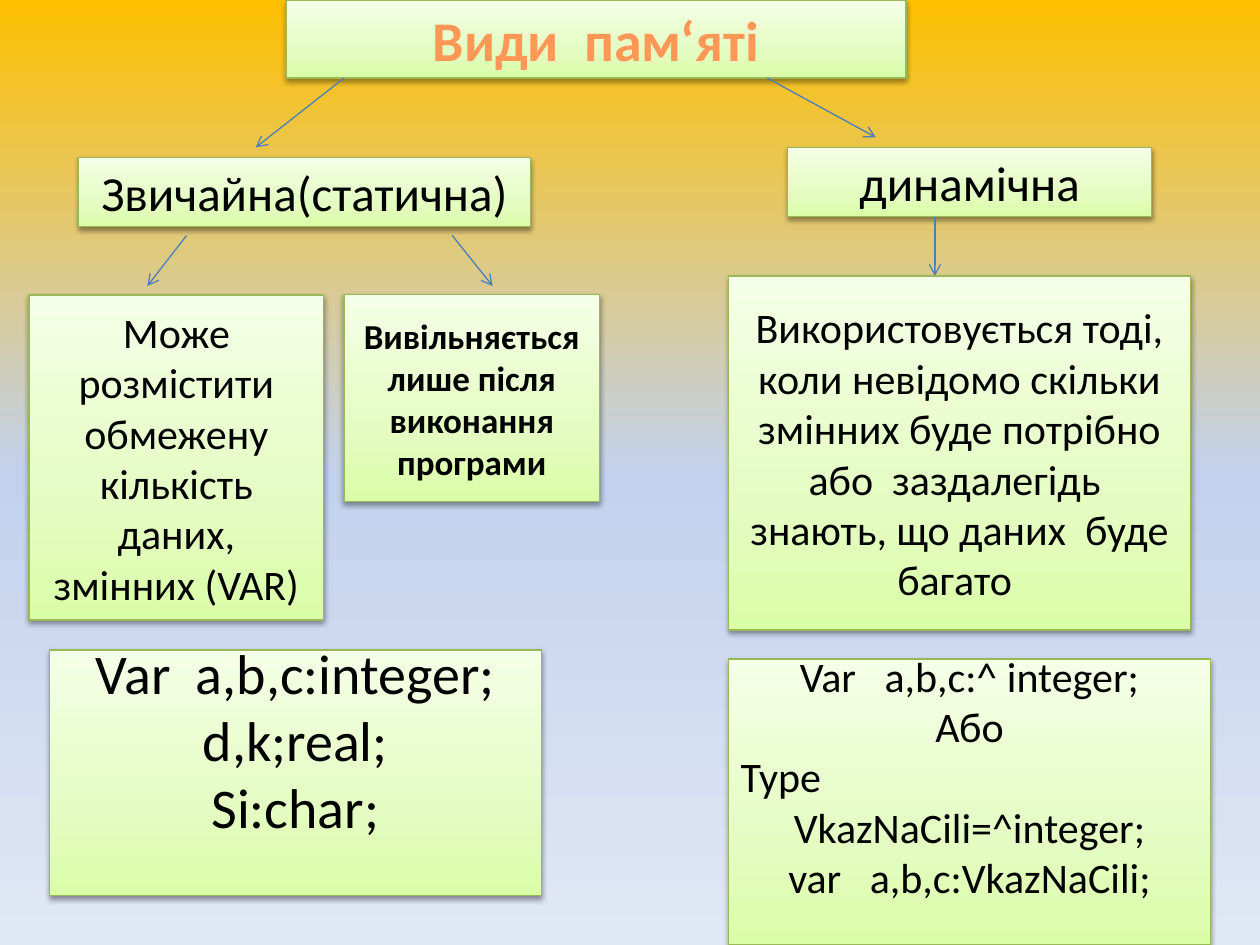
"""Builds the slide on kinds of memory: static and dynamic."""
from lxml.etree import SubElement
from pptx import Presentation
from pptx.dml.color import RGBColor
from pptx.enum.shapes import MSO_CONNECTOR as Link, MSO_SHAPE as Form
from pptx.enum.text import MSO_ANCHOR as Anchor, PP_ALIGN as Align
from pptx.oxml.ns import qn
from pptx.util import Inches, Pt

COLORS = {
    "title": "FF9856", "text": "000000", "border": "98B955",
    "arrow": "4B7EBC", "shadow": "000000",
}
GREEN = [(0, "DAFDA7"), (35, "E4FCC2"), (100, "F5FFE7")]
SKY = [(0, "FFC000"), (50, "C2D1ED"), (100, "E1E8F5")]


def paint_gradient(fill, element, stops, angle):
    fill.gradient()
    fill.gradient_angle = angle
    stop_list = element.find(".//" + qn("a:gsLst"))
    for stop in list(stop_list):
        stop_list.remove(stop)
    for position, color in stops:
        stop = SubElement(stop_list, qn("a:gs"), pos=str(position * 1000))
        SubElement(stop, qn("a:srgbClr"), val=color)


def add_shadow(shape):
    shape.shadow.inherit = False
    effects = shape._element.spPr.find(qn("a:effectLst"))
    shadow = SubElement(effects, qn("a:outerShdw"), blurRad=str(Pt(3.1)),
                        dist=str(Pt(1.6)), dir="5400000", rotWithShape="0")
    tint = SubElement(shadow, qn("a:srgbClr"), val=COLORS["shadow"])
    SubElement(tint, qn("a:alpha"), val="38000")


deck = Presentation()
deck.slide_width, deck.slide_height = Inches(10), Inches(7.5)
page = deck.slides.add_slide(deck.slide_layouts[6])
paint_gradient(page.background.fill, page._element, SKY, 270)

title_format = {"size": Pt(32), "bold": True}
heading_format = {"size": Pt(28)}
detail_format = {"size": Pt(24)}
release_format = {"size": Pt(20), "bold": True}
code_format = {"size": Pt(32)}

boxes = [
    ((2.27, 0, 4.92, 0.62), ["Види  пам‘яті"], title_format, "title", 0.05),
    ((0.62, 1.25, 3.59, 0.55), ["Звичайна(статична)"], heading_format, "text", 0.05),
    ((6.25, 1.17, 2.89, 0.55), ["динамічна"], heading_format, "text", 0.05),
    ((0.23, 2.34, 2.34, 2.58),
     ["Може розмістити", "обмежену", "кількість даних,\nзмінних (VAR)"],
     detail_format, "text", 0.05),
    ((2.73, 2.34, 2.03, 1.64), ["Вивільняється лише після виконання програми"],
     release_format, "text", 0.05),
    ((5.78, 2.19, 3.67, 2.81),
     ["Використовується тоді, коли невідомо скільки змінних буде потрібно "
      "або  заздалегідь  знають, що даних  буде", "багато "],
     detail_format, "text", 0.05),
    ((0.39, 5.16, 3.91, 1.95), ["Var  a,b,c:integer;\nd,k;real;", "Si:char;"],
     code_format, "text", 0.59),
    ((5.78, 5.23, 3.83, 2.27),
     ["Var   a,b,c:^ integer;", "Або", "Type",
      "VkazNaCili=^integer;\nvar   a,b,c:VkazNaCili;"],
     detail_format, "text", 0.46),
]
for place, lines, text_format, color, bottom_margin in boxes:
    box = page.shapes.add_shape(Form.RECTANGLE, *map(Inches, place))
    paint_gradient(box.fill, box._element, GREEN, 90)
    box.line.color.rgb = RGBColor.from_string(COLORS["border"])
    box.line.width = Pt(0.75)
    add_shadow(box)
    frame = box.text_frame
    frame.word_wrap = True
    frame.vertical_anchor = Anchor.MIDDLE
    frame.margin_bottom = Inches(bottom_margin)
    for index, line in enumerate(lines):
        para = frame.add_paragraph() if index else frame.paragraphs[0]
        para.text = line
        para.alignment = Align.LEFT if line == "Type" else Align.CENTER
        for span in para.runs:
            span.font.color.rgb = RGBColor.from_string(COLORS[color])
            for name, value in {"name": "Calibri", **text_format}.items():
                setattr(span.font, name, value)

arrows = [
    (2.73, 0.62, 2.03, 1.17),
    (6.09, 0.62, 6.95, 1.09),
    (1.48, 1.87, 1.17, 2.27),
    (3.59, 1.87, 3.91, 2.27),
    (7.42, 1.72, 7.42, 2.19),
]
for ends in arrows:
    arrow = page.shapes.add_connector(Link.STRAIGHT, *map(Inches, ends))
    arrow.line.color.rgb = RGBColor.from_string(COLORS["arrow"])
    arrow.line.width = Pt(0.75)
    SubElement(arrow.line._get_or_add_ln(), qn("a:tailEnd"), type="arrow")
    SubElement(arrow._element.spPr, qn("a:effectLst"))

deck.save("out.pptx")
